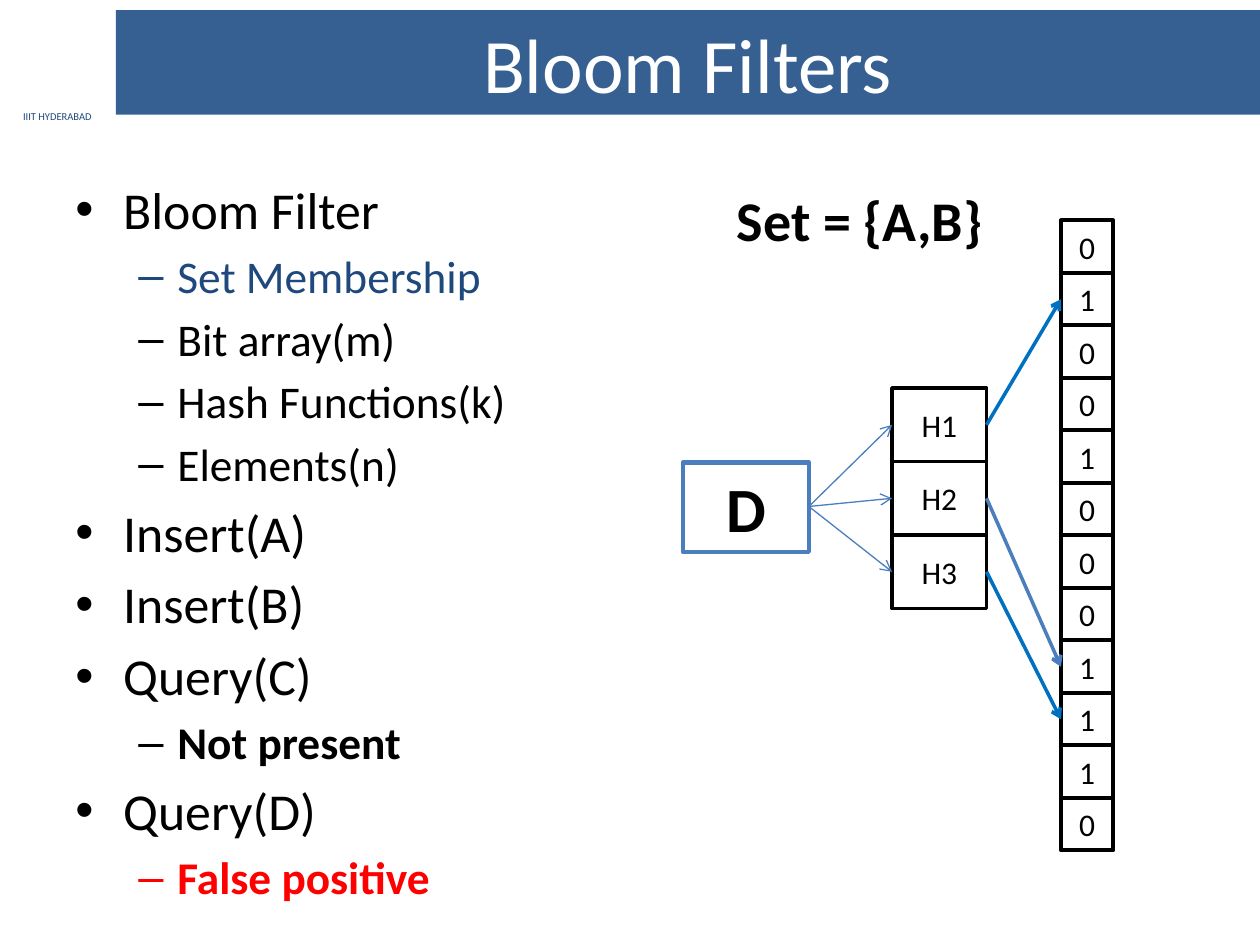
"""Build the Bloom Filters slide with its hash and bit array diagram."""
from lxml import etree
from pptx import Presentation
from pptx import util as u
from pptx.dml.color import RGBColor
from pptx.enum import shapes, text
from pptx.oxml.ns import qn


def colour(value):
    return RGBColor.from_string(value)


def write(frame, words, size=18, ink="000000", bold=False, align=text.PP_ALIGN.LEFT,
          anchor=text.MSO_ANCHOR.TOP, wrap=True, bullet=None, margin=0, hang=0, before=0):
    frame.word_wrap = wrap
    frame.vertical_anchor = anchor
    para = frame.paragraphs[0]
    if para.runs:
        para = frame.add_paragraph()
    if bullet:
        props = para._p.get_or_add_pPr()
        props.set("marL", str(u.Inches(margin)))
        props.set("indent", str(-u.Inches(hang)))
        etree.SubElement(props, qn("a:buFont")).set("typeface", "Arial")
        etree.SubElement(props, qn("a:buChar")).set("char", bullet)
    para.alignment = align
    para.space_before = u.Pt(before)
    span = para.add_run()
    span.text = words
    span.font.name = "Calibri"
    span.font.size = u.Pt(size)
    span.font.bold = bold
    span.font.color.rgb = colour(ink)


deck = Presentation()
deck.slide_width, deck.slide_height = u.Inches(10), u.Inches(7.5)
page = deck.slides.add_slide(deck.slide_layouts[6])

NAVY, BLUE, BRIGHT, BLACK = "1F497D", "4B7EBC", "0070C0", "000000"
bits = "010010001110"
bit_left, bit_top, bit_size = 8.42, 1.75, 5 / 12
hash_left, hash_top, hash_width, hash_height = 7.08, 3.08, 0.75, 7 / 12
item_right, item_middle = 6.42, 4.02

boxes = [
    ("IIIT HYDERABAD", 0.02, 0.82, 0.87, 0.2, None, "FFFFFF", 0.75,
     dict(size=6, ink=NAVY, wrap=False)),
    ("Bloom Filters", 0.92, 0.08, 9.08, 0.83, "376092", None, 0,
     dict(size=44, ink="FFFFFF")),
    ("D", 5.42, 3.67, 1, 0.71, None, BLUE, 2.5, dict(size=36, bold=True)),
]
for row, bit in enumerate(bits):
    boxes.append((bit, bit_left, bit_top + row * bit_size, bit_size, bit_size,
                  None, BLACK, 2.25, dict(wrap=False)))
for row in range(3):
    boxes.append((f"H{row + 1}", hash_left, hash_top + row * hash_height, hash_width,
                  hash_height, None, BLACK, 2.25, dict(wrap=False)))

for words, left, top, width, height, fill, edge, weight, style in boxes:
    box = page.shapes.add_shape(shapes.MSO_SHAPE.RECTANGLE, u.Inches(left), u.Inches(top),
                                u.Inches(width), u.Inches(height))
    box.shadow.inherit = False
    if fill:
        box.fill.solid()
        box.fill.fore_color.rgb = colour(fill)
    else:
        box.fill.background()
    if edge:
        box.line.color.rgb = colour(edge)
        box.line.width = u.Pt(weight)
    else:
        box.line.fill.background()
    write(box.text_frame, words, align=text.PP_ALIGN.CENTER,
          anchor=text.MSO_ANCHOR.MIDDLE, **style)

outline = [
    (0, "Bloom Filter", BLACK, False),
    (1, "Set Membership", NAVY, False),
    (1, "Bit array(m)", BLACK, False),
    (1, "Hash Functions(k)", BLACK, False),
    (1, "Elements(n)", BLACK, False),
    (0, "Insert(A)", BLACK, False),
    (0, "Insert(B)", BLACK, False),
    (0, "Query(C)", BLACK, False),
    (1, "Not present", BLACK, True),
    (0, "Query(D)", BLACK, False),
    (1, "False positive", "FF0000", True),
]
levels = [
    dict(size=29.6, bullet="•", margin=0.38, hang=0.38),
    dict(size=25.9, bullet="–", margin=0.81, hang=0.31),
]
body = page.shapes.add_textbox(u.Inches(0.5), u.Inches(1.33), u.Inches(9), u.Inches(5.75))
body.text_frame.margin_top = u.Inches(0.08)
for index, (level, words, ink, bold) in enumerate(outline):
    before = [5.6, 4.7][level] if index else 0
    write(body.text_frame, words, ink=ink, bold=bold, before=before, **levels[level])

label = page.shapes.add_textbox(u.Inches(5.75), u.Inches(1.42), u.Inches(2.17), u.Inches(0.64))
write(label.text_frame, "Set = {A,B}", size=32, bold=True)

arrows = []
for row, (target, ink) in enumerate([(1, BRIGHT), (8, BLUE), (9, BRIGHT)]):
    middle = hash_top + (row + 0.5) * hash_height
    bit_middle = bit_top + (target + 0.5) * bit_size
    arrows.append((item_right, item_middle, hash_left, middle, BLUE, 0.75))
    arrows.append((hash_left + hash_width, middle, bit_left, bit_middle, ink, 2))

for x1, y1, x2, y2, ink, weight in arrows:
    arrow = page.shapes.add_connector(shapes.MSO_CONNECTOR.STRAIGHT, u.Inches(x1),
                                      u.Inches(y1), u.Inches(x2), u.Inches(y2))
    arrow.line.color.rgb = colour(ink)
    arrow.line.width = u.Pt(weight)
    etree.SubElement(arrow.line._get_or_add_ln(), qn("a:tailEnd")).set("type", "arrow")
    etree.SubElement(arrow._element.spPr, qn("a:effectLst"))

deck.save("out.pptx")
